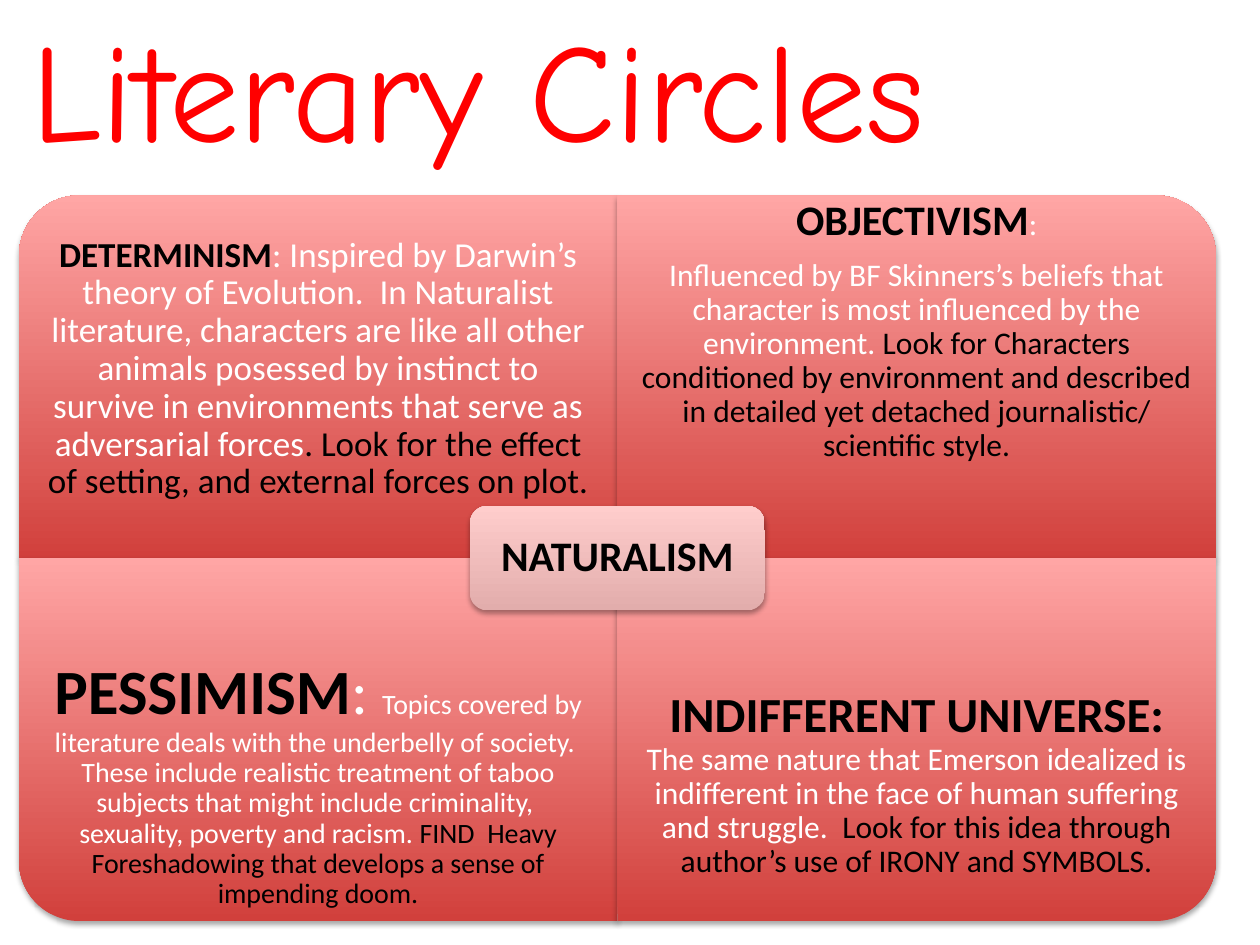
from lxml.etree import SubElement as Sub
from pptx import Presentation
from pptx.dml.color import RGBColor as Rgb
from pptx.enum.shapes import MSO_SHAPE as Kind
from pptx.enum.text import MSO_ANCHOR as Anchor, PP_ALIGN as Align
from pptx.oxml.ns import qn
from pptx.util import Inches as In, Pt

THEME = {
    "red": "FF0000", "black": "000000", "white": "FFFFFF",
    "panel": ("D1403C", "FFA6A5"), "hub": ("E2ADAC", "FFCDCC"),
    "head": "Comic Neue", "body": "Calibri",
    "title": 80, "huge": 36, "big": 28, "mid": 24,
    "text": 20, "small": 18, "tiny": 16,
}

TITLE = "Literary Circles"
HUB = [[("NATURALISM", "mid", "black", True)]]
PANELS = [
    {"col": 0, "row": 0, "turn": 270, "pad": 0.22, "drop": 0.3, "text": [[
        ("DETERMINISM", "text", "black", True),
        (": Inspired by Darwin’s theory of Evolution.  In Naturalist literature, "
         "characters are like all other animals posessed by instinct to survive in "
         "environments that serve as adversarial forces", "text", "white", False),
        (". Look for the effect of setting, and external forces on plot.",
         "text", "black", False)]]},
    {"col": 1, "row": 0, "turn": 0, "pad": 0.19, "drop": 0, "text": [
        [("OBJECTIVISM", "mid", "black", True), (":", "small", "white", False)],
        [("Influenced by BF Skinners’s beliefs that character is most influenced "
          "by the environment. ", "small", "white", False),
         ("Look for Characters conditioned by environment and described in detailed "
          "yet detached journalistic/ scientific style.", "small", "black", False)]]},
    {"col": 0, "row": 1, "turn": 180, "pad": 0.28, "drop": 0, "text": [[
        ("PESSIMISM", "huge", "black", True),
        (": ", "huge", "white", False),
        ("Topics covered by literature deals with the underbelly of society.  These "
         "include realistic treatment of taboo subjects that might include "
         "criminality,  sexuality, poverty and racism. ", "tiny", "white", False),
        ("FIND  Heavy Foreshadowing that develops a sense of impending doom.",
         "tiny", "black", False)]]},
    {"col": 1, "row": 1, "turn": 90, "pad": 0.22, "drop": 0, "text": [[
        ("INDIFFERENT UNIVERSE: ", "big", "black", True),
        ("The same nature that Emerson idealized is indifferent in the face of human "
         "suffering and struggle.  ", "small", "white", False),
        ("Look for this idea through author’s use of IRONY and SYMBOLS.",
         "small", "black", False)]]},
]

LEFT, TOP, WIDE, HIGH = 0.15, 1.55, 4.75, 2.88
TEXT_HIGH = HIGH * 0.75
HUB_WIDE, HUB_HIGH, HUB_IN = 2.34, 0.83, 0.04


def add_run(para, words, size, color, bold, face="body"):
    run = para.add_run()
    run.text = words
    font = run.font
    font.name, font.size, font.bold = THEME[face], Pt(THEME[size]), bold
    font.color.rgb = Rgb.from_string(THEME[color])


def add_card(slide, kind, mid_x, mid_y, wide, high, tones, turn=0):
    w, h = (high, wide) if turn % 180 else (wide, high)
    card = slide.shapes.add_shape(
        kind, In(mid_x - w / 2), In(mid_y - h / 2), In(w), In(h))
    card.rotation = turn
    card.line.fill.background()
    card.fill.gradient()
    card.fill.gradient_angle = 90
    for stop, tone in zip(card.fill.gradient_stops, THEME[tones]):
        stop.color.rgb = Rgb.from_string(tone)
    props = card.element.spPr
    props.find(qn("a:gradFill")).set("rotWithShape", "0")
    card.shadow.inherit = False
    shade = Sub(props.find(qn("a:effectLst")), qn("a:outerShdw"),
                blurRad=str(Pt(3.1)), dist=str(Pt(1.8)), dir="5400000",
                rotWithShape="0")
    tint = Sub(shade, qn("a:srgbClr"), val=THEME["black"])
    Sub(tint, qn("a:alpha"), val="35000")


def add_text(slide, x, y, wide, high, pad, text):
    frame = slide.shapes.add_textbox(In(x), In(y), In(wide), In(high)).text_frame
    frame.word_wrap = True
    frame.vertical_anchor = Anchor.MIDDLE
    frame.margin_left = frame.margin_right = In(pad)
    frame.margin_top = frame.margin_bottom = In(pad)
    for i, runs in enumerate(text):
        para = frame.add_paragraph() if i else frame.paragraphs[0]
        para.alignment = Align.CENTER
        para.line_spacing = 0.9
        para.space_after = Pt(8.4)
        for run in runs:
            add_run(para, *run)


def main():
    deck = Presentation()
    deck.slide_width, deck.slide_height = In(10), In(7.5)
    slide = deck.slides.add_slide(deck.slide_layouts[5])

    title = slide.shapes.title
    title.left, title.top, title.width, title.height = In(0.15), In(0.06), In(9), In(1.25)
    title.text_frame.vertical_anchor = Anchor.MIDDLE
    para = title.text_frame.paragraphs[0]
    para.alignment = Align.LEFT
    add_run(para, TITLE, "title", "red", False, "head")

    for p in PANELS:
        x, y = LEFT + p["col"] * WIDE, TOP + p["row"] * HIGH
        add_card(slide, Kind.ROUND_1_RECTANGLE, x + WIDE / 2, y + HIGH / 2,
                 WIDE, HIGH, "panel", p["turn"])
        text_y = y + p["row"] * (HIGH - TEXT_HIGH) + p["drop"]
        add_text(slide, x, text_y, WIDE, TEXT_HIGH, p["pad"], p["text"])

    mid_x, mid_y = LEFT + WIDE, TOP + HIGH
    add_card(slide, Kind.ROUNDED_RECTANGLE, mid_x, mid_y, HUB_WIDE, HUB_HIGH, "hub")
    wide, high = HUB_WIDE - 2 * HUB_IN, HUB_HIGH - 2 * HUB_IN
    add_text(slide, mid_x - wide / 2, mid_y - high / 2, wide, high, 0.1, HUB)
    deck.save("out.pptx")


if __name__ == "__main__":
    main()
